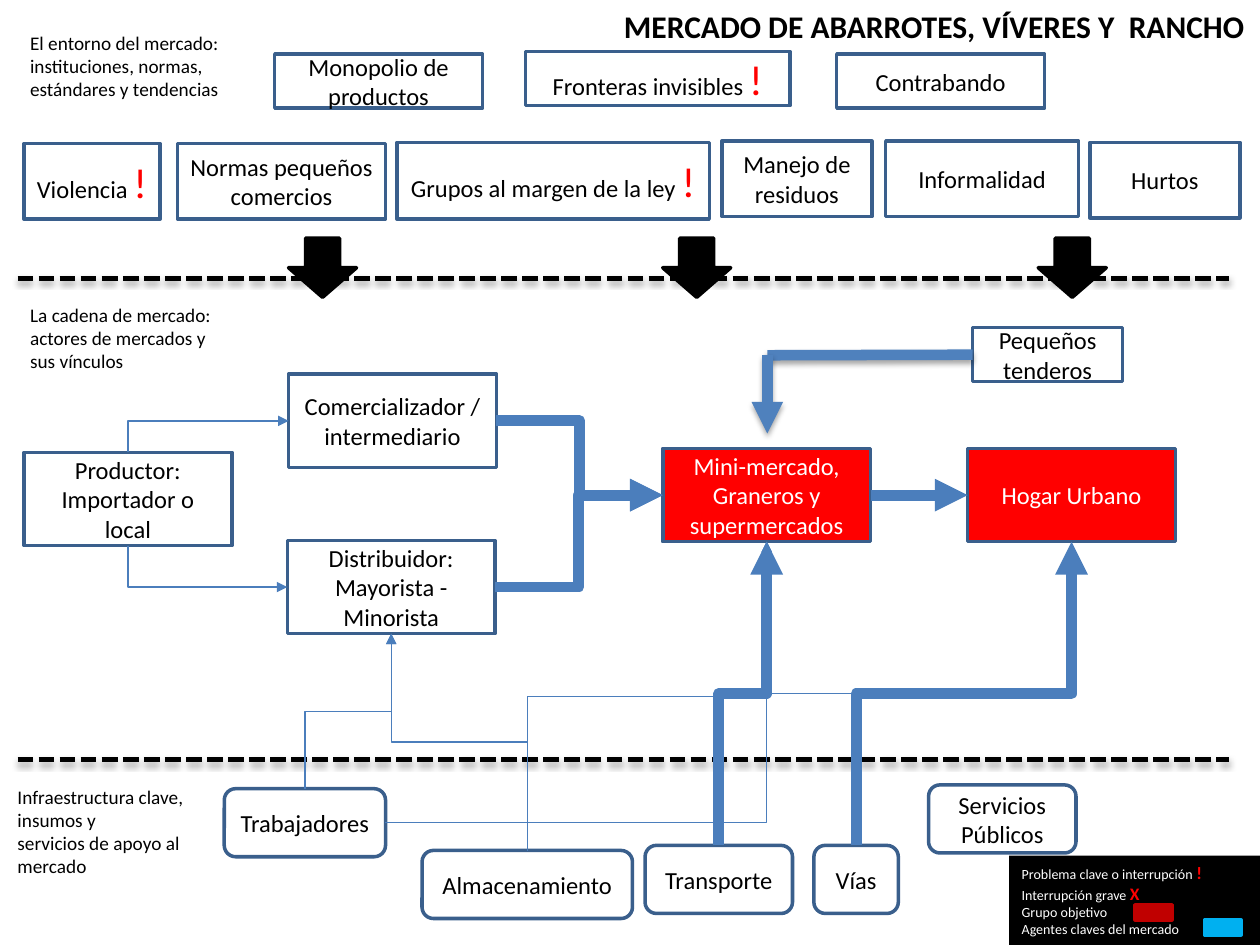
"""Builds a one-slide map of the grocery market: setting, chain and support."""
from lxml import etree
from pptx import Presentation
from pptx.dml.color import RGBColor
from pptx.enum.dml import MSO_LINE
from pptx.enum.shapes import MSO_CONNECTOR, MSO_SHAPE
from pptx.enum.text import MSO_ANCHOR, MSO_AUTO_SIZE, PP_ALIGN
from pptx.oxml import parse_xml
from pptx.oxml.ns import nsdecls, qn
from pptx.util import Inches, Pt

RECT, ROUND, DOWN = MSO_SHAPE.RECTANGLE, MSO_SHAPE.ROUNDED_RECTANGLE, MSO_SHAPE.DOWN_ARROW
LINE, ELBOW = MSO_CONNECTOR.STRAIGHT, MSO_CONNECTOR.ELBOW
DASH = MSO_LINE.SQUARE_DOT
LEFT, CENTER = PP_ALIGN.LEFT, PP_ALIGN.CENTER
TOP, MIDDLE = MSO_ANCHOR.TOP, MSO_ANCHOR.MIDDLE
GROW, FIXED = MSO_AUTO_SIZE.SHAPE_TO_FIT_TEXT, MSO_AUTO_SIZE.NONE

BLACK = RGBColor(0x00, 0x00, 0x00)
WHITE = RGBColor(0xFF, 0xFF, 0xFF)
RED = RGBColor(0xFF, 0x00, 0x00)
DARK = RGBColor(0xC0, 0x00, 0x00)
CYAN = RGBColor(0x00, 0xB0, 0xF0)
NAVY = RGBColor(0x3A, 0x5F, 0x8C)
BLUE = RGBColor(0x4B, 0x7E, 0xBC)
SKY = RGBColor(0x4F, 0x81, 0xBD)
SHADE = (
    f'<a:effectLst {nsdecls("a")}><a:outerShdw blurRad="40000" dist="23000" dir="5400000" '
    'rotWithShape="0"><a:srgbClr val="000000"><a:alpha val="35000"/></a:srgbClr>'
    '</a:outerShdw></a:effectLst>'
)
PLAIN = f'<a:effectLst {nsdecls("a")}/>'

TOP_ROWS = [
    ("Contrabando", 6.64, 0.43, 1.65, 0.43),
    ("Fronteras invisibles !", 4.17, 0.41, 2.1, 0.43),
    ("Monopolio de productos", 2.18, 0.43, 1.65, 0.43),
    ("Normas pequeños comercios", 1.41, 1.14, 1.65, 0.6),
    ("Manejo de residuos", 5.73, 1.12, 1.19, 0.6),
    ("Hurtos", 8.65, 1.13, 1.19, 0.6),
    ("Grupos al margen de la ley !", 3.15, 1.13, 2.48, 0.61),
    ("Informalidad", 7.03, 1.12, 1.53, 0.6),
    ("Violencia !", 0.19, 1.14, 1.08, 0.6),
]
CHAIN = [
    ("shop", "Mini-mercado,\nGraneros y supermercados", 5.26, 3.56, RED),
    ("home", "Hogar Urbano", 7.68, 3.56, RED),
    ("broker", "Comercializador / intermediario", 2.29, 2.97, None),
    ("dealer", "Distribuidor: Mayorista - Minorista", 2.28, 4.29, None),
    ("maker", "Productor:\nImportador o local", 0.19, 3.59, None),
]
SUPPORT = [
    ("store", "Almacenamiento", 3.35, 6.75, 1.67),
    ("truck", "Transporte", 5.12, 6.71, 1.17),
    ("road", "Vías", 6.46, 6.71, 0.67),
    ("staff", "Trabajadores", 1.78, 6.26, 1.28),
    ("power", "Servicios Públicos", 7.37, 6.23, 1.17),
]
THIN, THICK = 0.75, 6.25
LINKS = [
    ("maker", 0, "broker", 1, THIN),
    ("maker", 2, "dealer", 1, THIN),
    ("broker", 3, "shop", 1, THICK),
    ("dealer", 3, "shop", 1, THICK),
    ("shop", 3, "home", 1, THICK),
    ("road", 0, "shop", 2, THIN),
    ("truck", 0, "shop", 2, THICK),
    ("store", 0, "shop", 2, THIN),
    ("store", 0, "dealer", 2, THIN),
    ("staff", 0, "dealer", 2, THIN),
    ("staff", 3, "shop", 2, THIN),
    ("road", 0, "home", 2, THICK),
]
NOTES = [
    ("El entorno del mercado:\ninstituciones, normas,\nestándares y tendencias", 0.14, 0.2, 2.15, 0.66),
    ("La cadena de mercado: actores de mercados y sus vínculos", 0.14, 2.36, 1.79, 0.84),
    ("Infraestructura clave, insumos y\nservicios de apoyo al mercado", 0.04, 6.18, 1.99, 0.84),
]
LEGEND = "Problema clave o interrupción !\nInterrupción grave X\nGrupo objetivo\nAgentes claves del mercado"


class Board:
    """Holds the style and the current slide."""

    font = "Calibri"

    def __init__(self, slide):
        self.slide = slide
        self.shapes = slide.shapes

    def style(self, run, size, color, bold):
        font = run.font
        font.name, font.size, font.bold = self.font, Pt(size), bold
        font.color.rgb = color

    def fill_text(self, frame, text, size, color, align=CENTER, anchor=MIDDLE, bold=False, mark=(24, False)):
        frame.word_wrap = True
        frame.vertical_anchor = anchor
        frame.text = text
        for par in frame.paragraphs:
            par.alignment = align
            tail = par.text[-2:]
            if tail in (" !", " X"):
                par.text = par.text[:-1]
                self.style(par.add_run(), mark[0], RED, mark[1])
                par.runs[-1].text = tail[-1]
            self.style(par.runs[0], size, color, bold)

    def title(self, text, x, y, w, h):
        box = self.shapes.title
        box.left, box.top, box.width, box.height = map(Inches, (x, y, w, h))
        self.fill_text(box.text_frame, text, 18, BLACK, bold=True)
        box.text_frame.auto_size = FIXED
        box.text_frame.word_wrap = False

    def note(self, text, x, y, w, h):
        frame = self.shapes.add_textbox(*map(Inches, (x, y, w, h))).text_frame
        self.fill_text(frame, text, 11, BLACK, LEFT, TOP)
        frame.auto_size = GROW

    def box(self, kind, x, y, w, h, fill=None, edge=NAVY, text=None):
        shape = self.shapes.add_shape(kind, *map(Inches, (x, y, w, h)))
        shape.shadow.inherit = False
        if fill is None:
            shape.fill.background()
        else:
            shape.fill.solid()
            shape.fill.fore_color.rgb = fill
        if edge is None:
            shape.line.fill.background()
        else:
            shape.line.color.rgb = edge
            shape.line.width = Pt(2)
        if text:
            self.fill_text(shape.text_frame, text, 14, BLACK if fill is None else WHITE)
        return shape

    def legend(self, text, x, y, w, h):
        frame = self.box(RECT, x, y, w, h, BLACK, None).text_frame
        self.fill_text(frame, text, 8, WHITE, LEFT, TOP, mark=(10, True))
        frame.auto_size = GROW

    def finish(self, wire, color, width, head, effect):
        wire.line.color.rgb = color
        wire.line.width = Pt(width)
        props = wire.element.spPr
        if head:
            etree.SubElement(props.find(qn("a:ln")), qn("a:tailEnd"), type="triangle")
        props.append(parse_xml(effect))

    def line(self, x1, y1, x2, y2, color, width, dash=None, head=False):
        wire = self.shapes.add_connector(LINE, *map(Inches, (x1, y1, x2, y2)))
        if dash:
            wire.line.dash_style = dash
        self.finish(wire, color, width, head, SHADE)
        return wire

    def link(self, start, out, end, into, width):
        wire = self.shapes.add_connector(ELBOW, 0, 0, 0, 0)
        wire.begin_connect(start, out)
        wire.end_connect(end, into)
        props = wire.element.spPr
        if out % 2 != into % 2:
            props.find(qn("a:prstGeom")).set("prst", "bentConnector2")
        if out % 2 == 0:
            self.turn(wire, props.find(qn("a:xfrm")))
        self.finish(wire, BLUE, width, True, PLAIN)

    def turn(self, wire, frame):
        dx, dy = wire.end_x - wire.begin_x, wire.end_y - wire.begin_y
        mid_x, mid_y = wire.begin_x + dx // 2, wire.begin_y + dy // 2
        wire.width, wire.height = abs(dy), abs(dx)
        wire.left, wire.top = mid_x - abs(dy) // 2, mid_y - abs(dx) // 2
        frame.set("rot", str((90 if dy > 0 else 270) * 60000))
        frame.set("flipH", "0")
        frame.set("flipV", "1" if (dx > 0) == (dy > 0) else "0")


def main():
    deck = Presentation()
    deck.slide_width, deck.slide_height = Inches(10), Inches(7.5)
    board = Board(deck.slides.add_slide(deck.slide_layouts[5]))
    base = board.box(RECT, 0, 0, 10, 7.5, WHITE, WHITE)
    board.shapes.title.element.addprevious(base.element)
    board.title("MERCADO DE ABARROTES, VÍVERES Y  RANCHO", 4.85, -0.01, 5.13, 0.43)
    for note in NOTES:
        board.note(*note)
    for y in (2.21, 6.03):
        board.line(0.14, y, 9.75, y, BLACK, 3, DASH)
    for x in (2.29, 5.26, 8.24):
        board.box(DOWN, x, 1.89, 0.54, 0.47, BLACK, BLACK)
    board.legend(LEGEND, 8.01, 6.79, 1.99, 0.71)
    board.box(RECT, 9.01, 7.18, 0.29, 0.12, DARK, DARK)
    board.box(RECT, 9.56, 7.3, 0.29, 0.12, CYAN, CYAN)
    nodes = {}
    for key, text, x, y, fill in CHAIN:
        nodes[key] = board.box(RECT, x, y, 1.65, 0.74, fill, text=text)
    for key, text, x, y, w in SUPPORT:
        nodes[key] = board.box(ROUND, x, y, w, 0.54, text=text)
    for start, out, end, into, width in LINKS:
        board.link(nodes[start], out, nodes[end], into, width)
    for text, x, y, w, h in TOP_ROWS:
        board.box(RECT, x, y, w, h, text=text)
    small = board.box(RECT, 7.72, 2.6, 1.19, 0.43, text="Pequeños tenderos")
    board.line(7.72, 2.82, 6.09, 2.82, SKY, 6).begin_connect(small, 1)
    board.line(6.09, 2.82, 6.09, 3.44, SKY, 6, head=True)
    deck.save("out.pptx")


if __name__ == "__main__":
    main()
